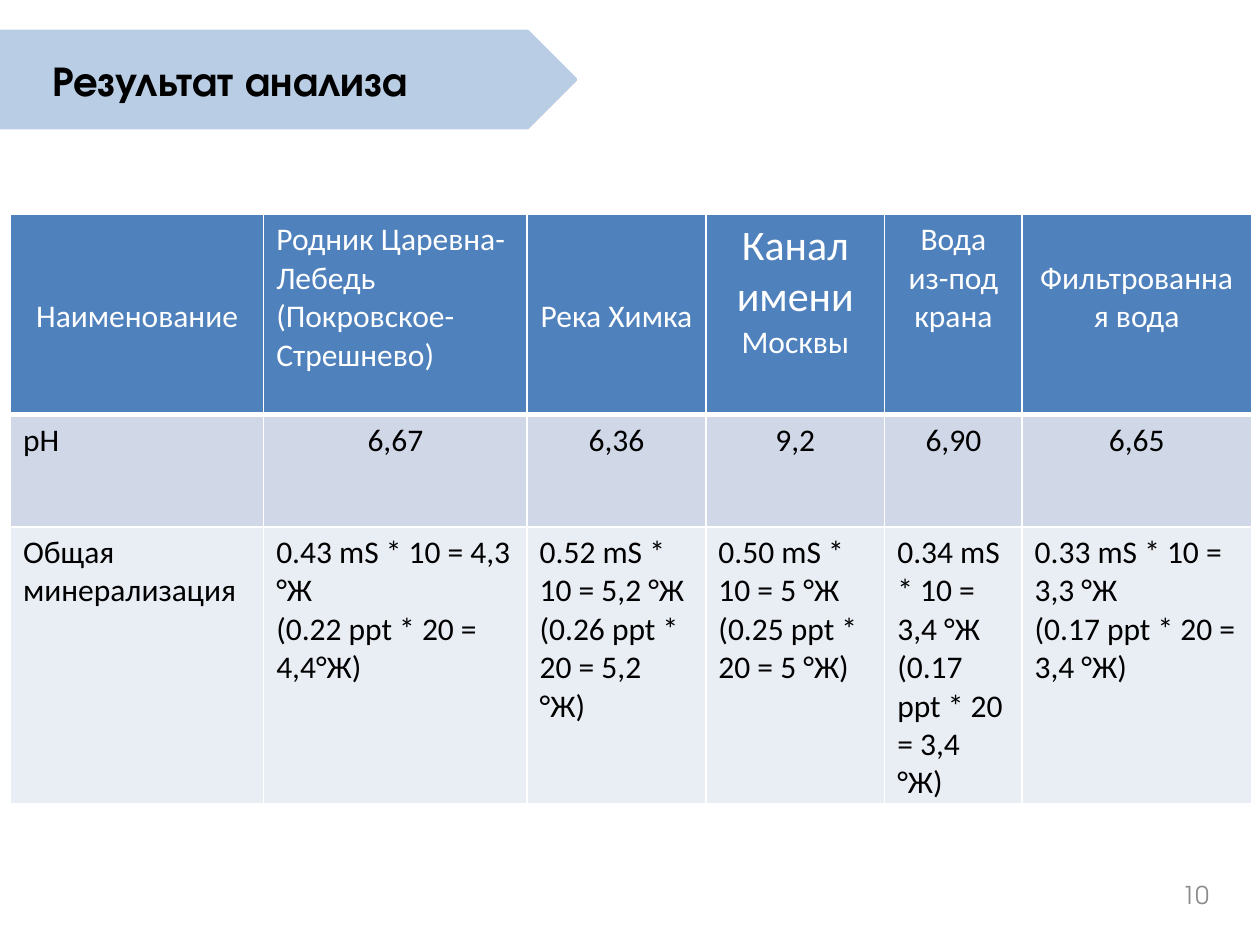
from pptx import Presentation
from pptx.dml.color import RGBColor
from pptx.enum.shapes import MSO_SHAPE as SHAPE
from pptx.enum.text import MSO_ANCHOR as ANCHOR, MSO_AUTO_SIZE as AUTO, PP_ALIGN as ALIGN
from pptx.oxml import parse_xml
from pptx.oxml.ns import nsdecls
from pptx.util import Pt

BLACK = RGBColor(0x00, 0x00, 0x00)
WHITE = RGBColor(0xFF, 0xFF, 0xFF)
GRAY = RGBColor(0x8C, 0x8C, 0x8C)
BANNER = RGBColor(0xB9, 0xCD, 0xE5)
HEADER = RGBColor(0x4F, 0x81, 0xBD)
BAND_DARK = RGBColor(0xD0, 0xD8, 0xE8)
BAND_LIGHT = RGBColor(0xE9, 0xED, 0xF4)

HEADING_FONT = "TeX Gyre Adventor"
BODY_FONT = "Calibri"
BODY_SIZE = 18
LINE_HEIGHT = 22
CELL_TOP = 3.6

COLUMNS = [144.7, 150.5, 102.2, 102.2, 78.5, 131]
ROWS = [114.5, 64.1, 158.4]
FILLS = [HEADER, BAND_DARK, BAND_LIGHT]

# Header text, alignment and the number of lines it is lowered by
HEADERS = [
    ("Наименование", ALIGN.CENTER, 2),
    ("Родник Царевна-Лебедь (Покровское-Стрешнево)", ALIGN.LEFT, 0),
    ("Река Химка", ALIGN.CENTER, 2),
    ("Канал имени Москвы", ALIGN.CENTER, 0),
    ("Вода из-под крана", ALIGN.CENTER, 0),
    ("Фильтрованная вода", ALIGN.CENTER, 1),
]
ACIDITY = ["pH", "6,67", "6,36", "9,2", "6,90", "6,65"]
MINERALS = [
    "Общая минерализация",
    "0.43 mS * 10 = 4,3 °Ж\n(0.22 ppt * 20 = 4,4°Ж)",
    "0.52 mS * 10 = 5,2 °Ж\n(0.26 ppt * 20 = 5,2 °Ж)",
    "0.50 mS * 10 = 5 °Ж\n(0.25 ppt * 20 = 5 °Ж)",
    "0.34 mS * 10 = 3,4 °Ж\n(0.17 ppt * 20 = 3,4 °Ж)",
    "0.33 mS * 10 = 3,3 °Ж\n(0.17 ppt * 20 = 3,4 °Ж)",
]


class Deck:
    def __init__(self, prs):
        self.s = prs.slides.add_slide(prs.slide_layouts[5])

    def style(self, tf, name, size, color, align=ALIGN.LEFT, bold=False):
        for p in tf.paragraphs:
            p.alignment = align
            p.font.name, p.font.size, p.font.bold = name, Pt(size), bold
            p.font.color.rgb = color

    def banner(self, x, y, w, h):
        """Add the pentagon that lies behind everything else."""
        sp = self.s.shapes.add_shape(SHAPE.PENTAGON, Pt(x), Pt(y), Pt(w), Pt(h))
        sp.shadow.inherit = False
        sp.fill.solid()
        sp.fill.fore_color.rgb = BANNER
        sp.line.color.rgb = BANNER
        sp.line.width = Pt(2)
        title = self.s.shapes.title.element
        title.addprevious(sp.element)

    def title(self, text, x, y, w, h):
        sp = self.s.shapes.title
        sp.left, sp.top, sp.width, sp.height = Pt(x), Pt(y), Pt(w), Pt(h)
        tf = sp.text_frame
        tf.text = text
        tf.word_wrap = True
        tf.auto_size = AUTO.NONE
        tf.vertical_anchor = ANCHOR.TOP
        self.style(tf, HEADING_FONT, 24, BLACK, bold=True)

    def page_number(self, text, x, y, w, h):
        tf = self.s.shapes.add_textbox(Pt(x), Pt(y), Pt(w), Pt(h)).text_frame
        tf.text = text
        tf.word_wrap = True
        tf.vertical_anchor = ANCHOR.MIDDLE
        self.style(tf, HEADING_FONT, 14, GRAY, ALIGN.RIGHT)

    def table(self, x, y, widths, heights):
        table = self.s.shapes.add_table(
            len(heights), len(widths), Pt(x), Pt(y),
            Pt(sum(widths)), Pt(sum(heights))).table
        table.horz_banding = False
        for column, width in zip(table.columns, widths):
            column.width = Pt(width)
        for row, height in zip(table.rows, heights):
            row.height = Pt(height)
        return table

    def cell(self, cell, text, fill, color, align, skip=0, top=1, bottom=1):
        """Fill a cell; skip lowers its text by whole lines, top and bottom are border widths."""
        cell.text = text
        cell.margin_top = Pt(CELL_TOP + skip * LINE_HEIGHT)
        cell.margin_bottom = 0
        cell.fill.solid()
        cell.fill.fore_color.rgb = fill
        self.style(cell.text_frame, BODY_FONT, BODY_SIZE, color, align)
        borders = {"lnL": 1, "lnR": 1, "lnT": top, "lnB": bottom}
        tc_pr = cell._tc.get_or_add_tcPr()
        for i, (tag, width) in enumerate(borders.items()):
            tc_pr.insert(i, parse_xml(
                f'<a:{tag} {nsdecls("a")} w="{Pt(width)}"><a:solidFill>'
                f'<a:srgbClr val="{WHITE}"/></a:solidFill></a:{tag}>'))


def main():
    prs = Presentation()
    prs.slide_width, prs.slide_height = Pt(720), Pt(540)
    deck = Deck(prs)
    deck.banner(0, 18, 329, 55)
    deck.title("Результат анализа", 23, 27.4, 284, 36)
    deck.page_number("10", 530, 497, 168, 29)

    table = deck.table(6, 122.5, COLUMNS, ROWS)
    for col, (text, align, skip) in enumerate(HEADERS):
        deck.cell(table.cell(0, col), text, HEADER, WHITE, align, skip, bottom=3)
        deck.cell(table.cell(1, col), ACIDITY[col], BAND_DARK, BLACK,
                  ALIGN.CENTER if col else ALIGN.LEFT, top=3)
        deck.cell(table.cell(2, col), MINERALS[col], BAND_LIGHT, BLACK, ALIGN.LEFT)

    # The canal's name starts in larger type
    p = table.cell(0, 3).text_frame.paragraphs[0]
    p.runs[0].text = "Канал имени "
    p.runs[0].font.size = Pt(24)
    p.add_run().text = "Москвы"

    prs.save("out.pptx")


if __name__ == "__main__":
    main()
